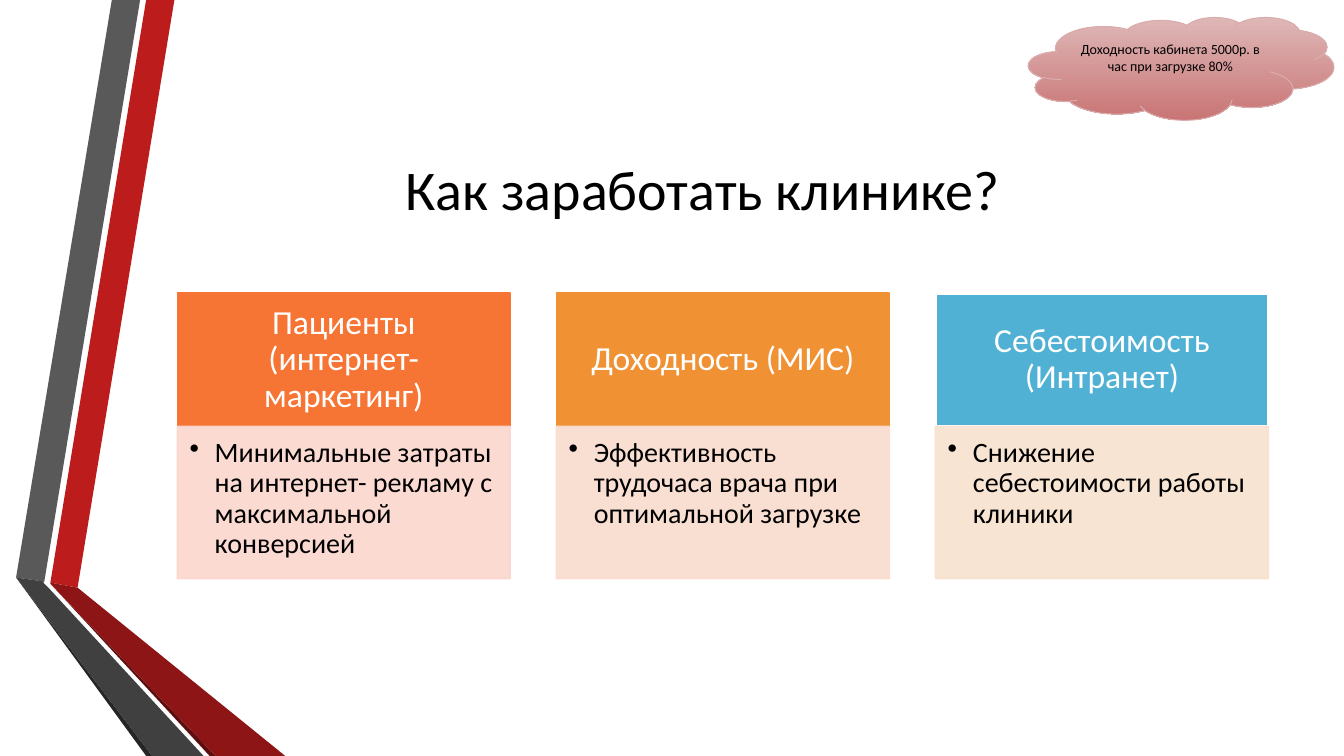
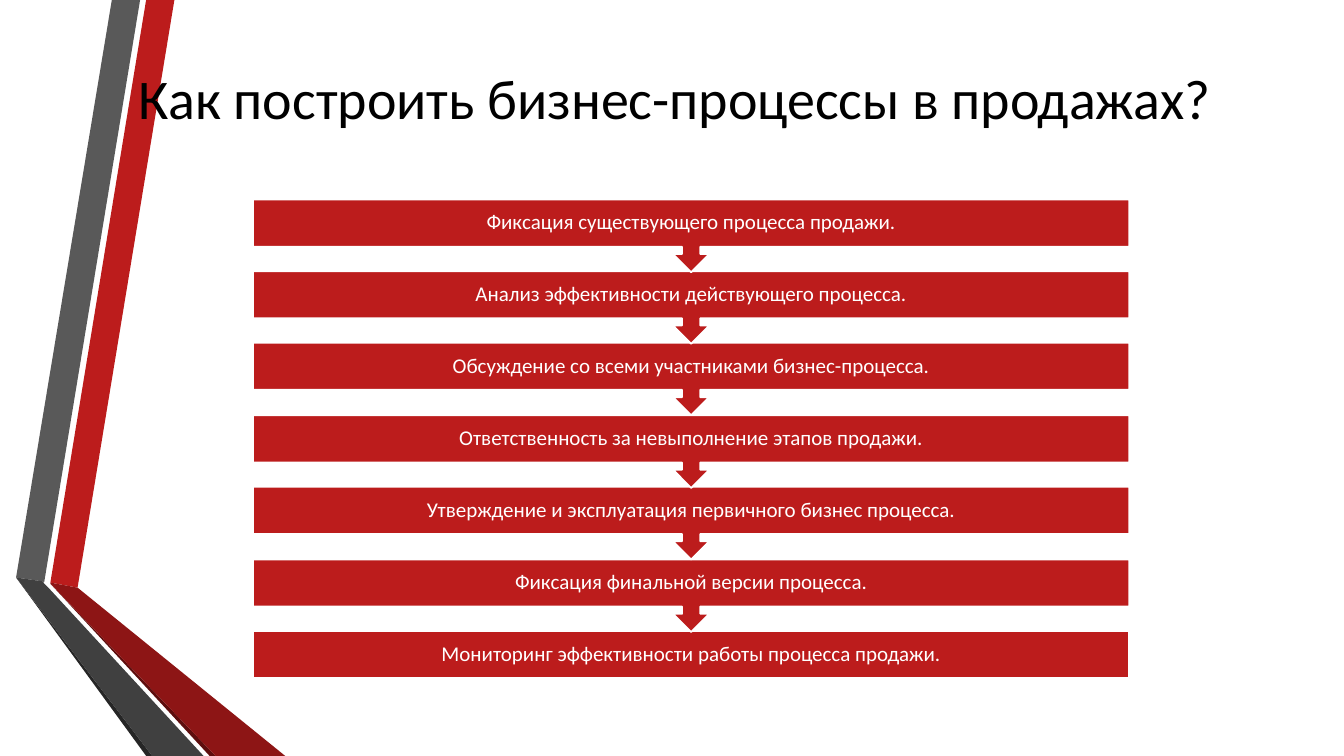
"""Build two clinic sales slides with shared ribbons and title style."""
from dataclasses import dataclass

from lxml.etree import SubElement
from pptx import Presentation
from pptx.dml.color import RGBColor
from pptx.enum.shapes import MSO_SHAPE
from pptx.enum.text import MSO_ANCHOR, PP_ALIGN
from pptx.oxml.ns import qn
from pptx.shapes.autoshape import Shape
from pptx.slide import Slide, SlideLayout
from pptx.util import Emu, Pt

EMU_PER_PX = 9144
FONT = "Calibri"
BLACK = RGBColor(0x00, 0x00, 0x00)
WHITE = RGBColor(0xFF, 0xFF, 0xFF)
RED = RGBColor(0xBC, 0x1C, 0x1C)
DARK_RED = RGBColor(0x8D, 0x15, 0x15)
DEEP_RED = RGBColor(0x5E, 0x0E, 0x0E)
GREY = RGBColor(0x59, 0x59, 0x59)
DARK_GREY = RGBColor(0x40, 0x40, 0x40)
DEEP_GREY = RGBColor(0x26, 0x26, 0x26)
ORANGE = RGBColor(0xF6, 0x75, 0x34)
AMBER = RGBColor(0xF0, 0x92, 0x34)
BLUE = RGBColor(0x50, 0xB1, 0xD4)
PALE_PINK = RGBColor(0xFB, 0xD6, 0xCE)
PALE_PEACH = RGBColor(0xF9, 0xDC, 0xCE)
PALE_SAND = RGBColor(0xF7, 0xE2, 0xCE)
CLOUD_TOP = RGBColor(0xDF, 0xB7, 0xB7)
CLOUD_BOTTOM = RGBColor(0xC9, 0x75, 0x75)
CLOUD_EDGE = RGBColor(0xDA, 0xAC, 0xAC)


@dataclass(frozen=True)
class Box:
    """A rectangle in px."""

    left: int
    top: int
    width: int
    height: int

    def emu(self) -> tuple[Emu, Emu, Emu, Emu]:
        """Return the rectangle in EMU."""
        return px(self.left), px(self.top), px(self.width), px(self.height)


@dataclass(frozen=True)
class Ribbon:
    """One facet of the folded side ribbons."""

    color: RGBColor
    corners: tuple[tuple[int, int], ...]


@dataclass(frozen=True)
class Source:
    """One source of clinic income with its explanation."""

    heading: str
    detail: str
    color: RGBColor
    tint: RGBColor
    edge: RGBColor
    edge_width: float = 1.25


@dataclass(frozen=True)
class TextStyle:
    """Formatting of a block of text; insets are left, top, right, bottom px."""

    size: int
    color: RGBColor
    insets: tuple[int, int, int, int] = (10, 5, 10, 5)
    align: PP_ALIGN = PP_ALIGN.CENTER
    anchor: MSO_ANCHOR = MSO_ANCHOR.MIDDLE
    spacing: float = 0.9


TITLE_STYLE = TextStyle(40, BLACK, spacing=1.0)
HEADING_STYLE = TextStyle(24, WHITE, (19, 11, 19, 11))
DETAIL_STYLE = TextStyle(20, BLACK, (12, 12, 16, 17), PP_ALIGN.LEFT, MSO_ANCHOR.TOP)
STEP_STYLE = TextStyle(15, WHITE, (12, 12, 12, 12))
CLOUD_STYLE = TextStyle(10, BLACK, (10, 5, 10, 22), spacing=1.0)

RIBBONS = (
    Ribbon(RED, ((50, 578), (77, 583), (173, 0), (145, 0))),
    Ribbon(GREY, ((139, 0), (111, 0), (16, 573), (44, 577))),
    Ribbon(DEEP_GREY, ((16, 573), (145, 750), (151, 750))),
    Ribbon(DEEP_RED, ((50, 579), (208, 750), (214, 750))),
    Ribbon(DARK_RED, ((50, 579), (214, 750), (283, 750), (77, 583), (50, 578))),
    Ribbon(DARK_GREY, ((202, 750), (48, 583), (43, 578), (44, 577), (16, 573), (151, 750))),
)
SOURCES = (
    Source("Пациенты (интернет-маркетинг)",
           "Минимальные затраты на интернет- рекламу с максимальной конверсией",
           ORANGE, PALE_PINK, ORANGE),
    Source("Доходность (МИС)",
           "Эффективность трудочаса врача при оптимальной загрузке",
           AMBER, PALE_PEACH, AMBER),
    Source("Себестоимость (Интранет)",
           "Снижение себестоимости работы клиники",
           BLUE, PALE_SAND, WHITE, 1.75),
)
STEPS = (
    "Фиксация существующего процесса продажи.",
    "Анализ эффективности действующего процесса.",
    "Обсуждение со всеми участниками бизнес-процесса.",
    "Ответственность за невыполнение этапов продажи.",
    "Утверждение и эксплуатация первичного бизнес процесса.",
    "Фиксация финальной версии процесса.",
    "Мониторинг эффективности работы процесса продажи.",
)


def px(length: int) -> Emu:
    """Convert px to EMU."""
    return Emu(length * EMU_PER_PX)


def write(holder: Shape, text: str, style: TextStyle) -> None:
    """Put one formatted paragraph into a shape."""
    frame = holder.text_frame
    frame.text = text
    frame.word_wrap = True
    frame.vertical_anchor = style.anchor
    (frame.margin_left, frame.margin_top,
     frame.margin_right, frame.margin_bottom) = map(px, style.insets)
    paragraph = frame.paragraphs[0]
    paragraph.alignment = style.align
    paragraph.line_spacing = style.spacing
    font = paragraph.runs[0].font
    font.name = FONT
    font.size = Pt(style.size)
    font.color.rgb = style.color


def add_panel(slide: Slide, preset: MSO_SHAPE, box: Box, fill: RGBColor,
              edge: RGBColor, edge_width: float = 1.25) -> Shape:
    """Add a filled and outlined preset shape without a shadow."""
    panel = slide.shapes.add_shape(preset, *box.emu())
    panel.shadow.inherit = False
    panel.fill.solid()
    panel.fill.fore_color.rgb = fill
    panel.line.color.rgb = edge
    panel.line.width = Pt(edge_width)
    return panel


def make_translucent(panel: Shape, percent: int) -> None:
    """Set the opacity of every plain colour in a shape."""
    for color in panel.element.iter(qn("a:srgbClr")):
        SubElement(color, qn("a:alpha"), val=str(percent * 1000))


def add_bullet(panel: Shape, indent: int) -> None:
    """Give the first paragraph a hanging bullet."""
    properties = panel.text_frame.paragraphs[0]._p.get_or_add_pPr()
    properties.set("marL", str(px(indent)))
    properties.set("indent", str(px(-indent)))
    SubElement(properties, qn("a:buChar"), char="•")


def add_titled_slide(layout: SlideLayout, slides, title: str, box: Box) -> Slide:
    """Add a slide and place its title."""
    slide = slides.add_slide(layout)
    heading = slide.shapes.title
    heading.left, heading.top, heading.width, heading.height = box.emu()
    write(heading, title, TITLE_STYLE)
    return slide


def add_ribbons(slide: Slide) -> None:
    """Draw the side ribbons and hand them to the slide's layout."""
    layout_tree = slide.slide_layout.shapes.element
    for ribbon in RIBBONS:
        builder = slide.shapes.build_freeform(*ribbon.corners[0], scale=EMU_PER_PX)
        builder.add_line_segments(ribbon.corners[1:], close=True)
        facet = builder.convert_to_shape()
        facet.shadow.inherit = False
        facet.fill.solid()
        facet.fill.fore_color.rgb = ribbon.color
        facet.line.fill.background()
        layout_tree.append(facet.element)


def add_source(slide: Slide, source: Source, left: int) -> None:
    """Draw a heading panel with its explanation below."""
    heading = add_panel(slide, MSO_SHAPE.RECTANGLE, Box(left, 291, 330, 132),
                        source.color, source.edge, source.edge_width)
    write(heading, source.heading, HEADING_STYLE)
    detail = add_panel(slide, MSO_SHAPE.RECTANGLE, Box(left, 423, 330, 151),
                       source.tint, source.tint)
    make_translucent(detail, 90)
    write(detail, source.detail, DETAIL_STYLE)
    add_bullet(detail, 25)


def add_yield_cloud(slide: Slide) -> None:
    """Draw the cloud with the hourly yield."""
    cloud = add_panel(slide, MSO_SHAPE.CLOUD, Box(1020, 17, 303, 102),
                      CLOUD_TOP, CLOUD_EDGE, 0.75)
    cloud.fill.gradient()
    cloud.fill.gradient_angle = 270
    for stop, position, color in zip(cloud.fill.gradient_stops, (0, 1),
                                     (CLOUD_TOP, CLOUD_BOTTOM)):
        stop.position = position
        stop.color.rgb = color
    write(cloud, "Доходность кабинета 5000р. в час при загрузке 80%", CLOUD_STYLE)


def add_steps(slide: Slide) -> None:
    """Draw the process steps upwards so that each arrow overlaps the next step."""
    last = len(STEPS) - 1
    for index in range(last, -1, -1):
        preset, height = ((MSO_SHAPE.RECTANGLE, 47) if index == last
                          else (MSO_SHAPE.DOWN_ARROW_CALLOUT, 72))
        box = Box(251, 198 + 714 * index // 10, 869, height)
        step = add_panel(slide, preset, box, RED, WHITE)
        write(step, STEPS[index], STEP_STYLE)


def main() -> None:
    """Build and save the presentation."""
    deck = Presentation()
    deck.slide_width, deck.slide_height = px(1333), px(750)
    layout = deck.slide_layouts.get_by_name("Title Only")

    income = add_titled_slide(layout, deck.slides, "Как заработать клинике?",
                              Box(149, 142, 1096, 89))
    add_ribbons(income)
    for index, source in enumerate(SOURCES):
        add_source(income, source, 176 + 376 * index)
    add_yield_cloud(income)

    process = add_titled_slide(layout, deck.slides,
                               "Как построить бизнес-процессы в продажах?",
                               Box(121, 0, 1096, 192))
    add_steps(process)
    deck.save("out.pptx")


if __name__ == "__main__":
    main()
